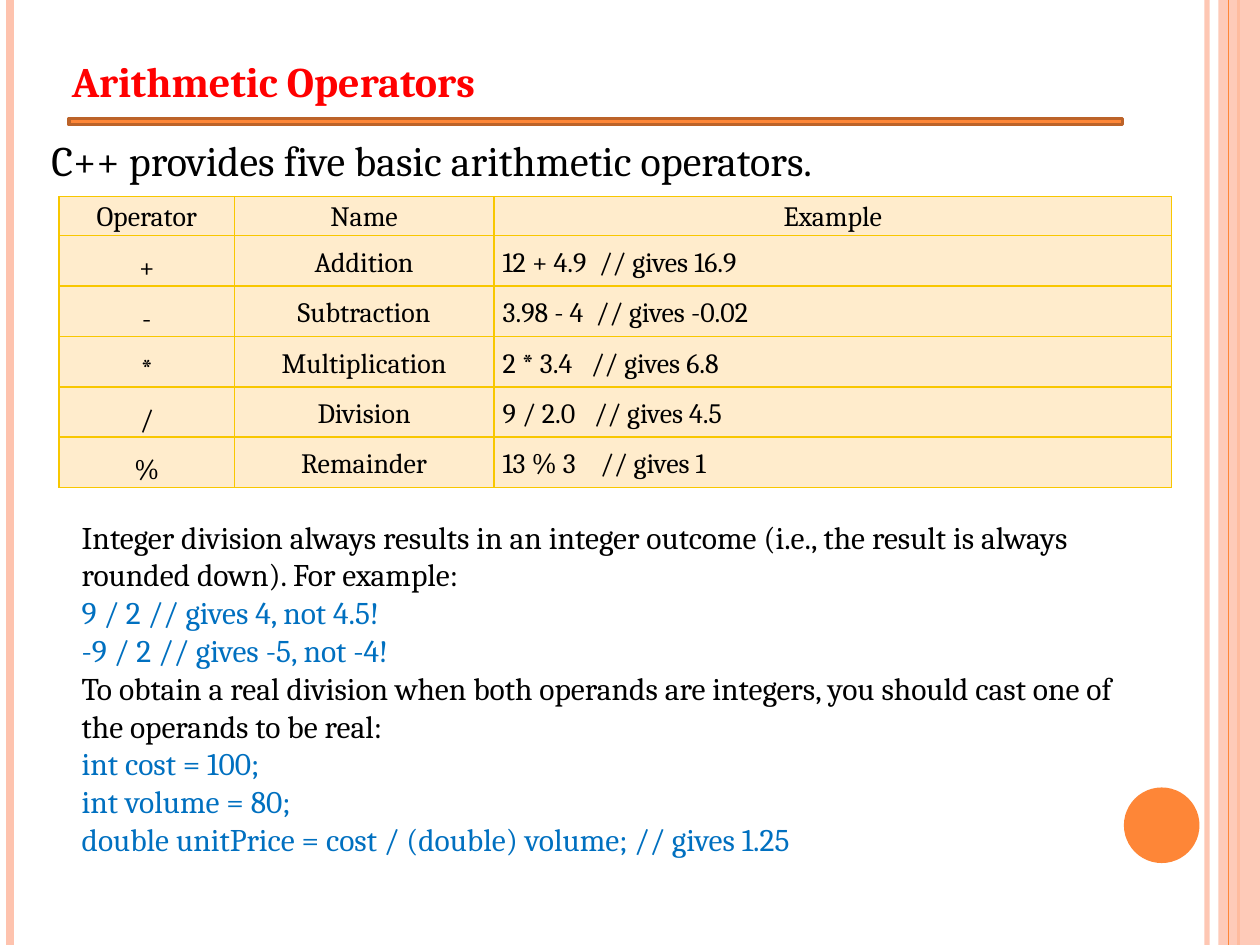
from lxml import etree
from pptx import Presentation
from pptx.dml.color import RGBColor
from pptx.enum.shapes import MSO_CONNECTOR, MSO_SHAPE
from pptx.enum.text import MSO_ANCHOR, PP_ALIGN
from pptx.oxml import parse_xml
from pptx.oxml.ns import nsdecls, qn
from pptx.util import Inches, Pt

COLORS = {
    "peach": "FEC3AE", "orange": "FE8637", "rust": "BC6329",
    "red": "FF0000", "black": "000000", "blue": "0070C0",
    "cell": "FFECCC", "gold": "F8C700",
}


def color(name):
    return RGBColor.from_string(COLORS[name])


def write(frame, lines, size, bold=False):
    """Fill a text frame with (text, colour name) paragraphs."""
    frame.word_wrap = True
    frame.vertical_anchor = MSO_ANCHOR.TOP
    frame.text = "\n".join(text for text, _ in lines)
    for para, (_, name) in zip(frame.paragraphs, lines):
        para.alignment = PP_ALIGN.LEFT
        for span in para.runs:
            span.font.name = "Cambria"
            span.font.size = Pt(size)
            span.font.bold = bold
            span.font.color.rgb = color(name)


deck = Presentation()
deck.slide_width, deck.slide_height = Inches(10), Inches(7.5)
page = deck.slides.add_slide(deck.slide_layouts[5])
shapes = page.shapes

# Side stripes, decorative band, circle and title rule
stripes = [(9.58, "peach", 3, 93), (0.08, "peach", 4.5, 100),
           (9.83, "orange", 1.5, 100), (9.75, "orange", 0.75, 100)]
blocks = [
    (MSO_SHAPE.RECTANGLE, 9.67, 0, 0.33, 7.5, "peach", None, 87),
    (MSO_SHAPE.OVAL, 8.92, 6.25, 0.6, 0.6, "orange", None, 100),
    (MSO_SHAPE.RECTANGLE, 0.55, 0.94, 8.36, 0.05, "orange", "rust", 100),
]
translucent = []
for x, name, width, opacity in stripes:
    stripe = shapes.add_connector(
        MSO_CONNECTOR.STRAIGHT, Inches(x), 0, Inches(x), Inches(7.5))
    stripe.line.color.rgb = color(name)
    stripe.line.width = Pt(width)
    properties = stripe._element.spPr
    etree.SubElement(properties, qn("a:effectLst"))
    translucent.append((properties, opacity))
    if x == 9.83:
        band_position = stripe
for kind, left, top, width, height, fill, outline, opacity in blocks:
    block = shapes.add_shape(
        kind, Inches(left), Inches(top), Inches(width), Inches(height))
    block.shadow.inherit = False
    block.fill.solid()
    block.fill.fore_color.rgb = color(fill)
    if outline:
        block.line.color.rgb = color(outline)
        block.line.width = Pt(2)
    else:
        block.line.fill.background()
    translucent.append((block._element.spPr, opacity))
    if left == 9.67:
        band_position._element.addnext(block._element)
for properties, opacity in translucent:
    if opacity < 100:
        tint = next(properties.iter(qn("a:srgbClr")))
        etree.SubElement(tint, qn("a:alpha"), val=str(opacity * 1000))

# Title and introduction
title = shapes.title
title.left, title.top = Inches(0.47), Inches(0.39)
title.width, title.height = Inches(8.98), Inches(0.5)
write(title.text_frame, [("Arithmetic Operators", "red")], 24, bold=True)

intro = shapes.add_textbox(Inches(0.31), Inches(1.02), Inches(9.14), Inches(0.5))
write(intro.text_frame,
      [("C++ provides five basic arithmetic operators.", "black")], 24)

# Operator table
rows = [
    ("Operator", "Name", "Example"),
    ("+", "Addition", "12 + 4.9  // gives 16.9"),
    ("-", "Subtraction", "3.98 - 4  // gives -0.02"),
    ("*", "Multiplication", "2 * 3.4   // gives 6.8"),
    ("/", "Division", "9 / 2.0   // gives 4.5"),
    ("%", "Remainder", "13 % 3    // gives 1"),
]
table = shapes.add_table(len(rows), 3, Inches(0.47), Inches(1.56),
                         Inches(8.83), Inches(2.31)).table
for column, width in zip(table.columns, (1.39, 2.06, 5.38)):
    column.width = Inches(width)
for r, row in enumerate(rows):
    table.rows[r].height = Inches(0.4 if r else 0.31)
    for c, text in enumerate(row):
        cell = table.cell(r, c)
        cell.margin_left = cell.margin_right = Inches(0.07)
        cell.margin_top = cell.margin_bottom = 0
        write(cell.text_frame, [(text, "black")], 16)
        cell.vertical_anchor = MSO_ANCHOR.MIDDLE if r else MSO_ANCHOR.TOP
        para = cell.text_frame.paragraphs[0]
        para.line_spacing = 1.5 if r and c == 0 else 1.15
        if r == 0 or c < 2:
            para.alignment = PP_ALIGN.CENTER
        borders = cell._tc.get_or_add_tcPr()
        for side in ("lnL", "lnR", "lnT", "lnB"):
            borders.append(parse_xml(
                f'<a:{side} {nsdecls("a")} w="12700"><a:solidFill>'
                f'<a:srgbClr val="{COLORS["gold"]}"/></a:solidFill></a:{side}>'))
        cell.fill.solid()
        cell.fill.fore_color.rgb = color("cell")

# Notes on integer division
division = shapes.add_textbox(
    Inches(0.55), Inches(4.06), Inches(8.67), Inches(3.13))
write(division.text_frame, [
    ("Integer division always results in an integer outcome (i.e., the result "
     "is always rounded down). For example:", "black"),
    ("9 / 2 // gives 4, not 4.5!", "blue"),
    ("-9 / 2 // gives -5, not -4!", "blue"),
    ("To obtain a real division when both operands are integers, you should "
     "cast one of the operands to be real:", "black"),
    ("int cost = 100;", "blue"),
    ("int volume = 80;", "blue"),
    ("double unitPrice = cost / (double) volume; // gives 1.25", "blue"),
], 18)

deck.save("out.pptx")
